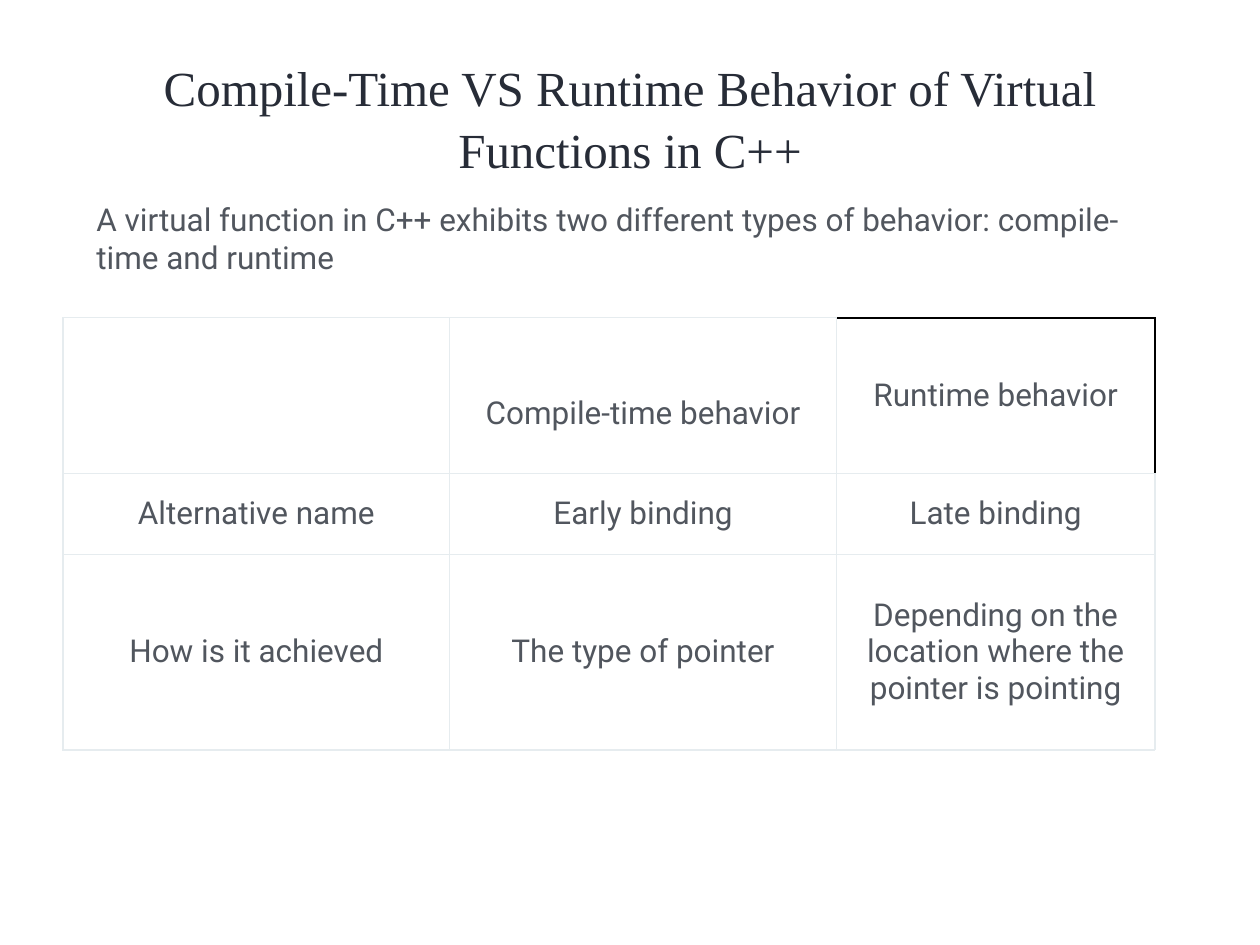
from lxml import etree
from pptx import Presentation
from pptx.dml import color
from pptx.enum import text as t
from pptx.oxml import ns
from pptx.util import Pt

COLORS = {"title": "272C37", "body": "51565E", "grid": "E6ECEF",
          "accent": "000000", "cell": "FFFFFF"}
COLUMN_WIDTHS = (221, 221, 182)
ROW_HEIGHTS = (89.2, 46.2, 111.6)
COMPARISON = (
    ("", "Compile-time behavior", "Runtime behavior"),
    ("Alternative name", "Early binding", "Late binding"),
    ("How is it achieved", "The type of pointer",
     "Depending on the location where the pointer is pointing"),
)


def rgb(name):
    """Return the named colour."""
    return color.RGBColor.from_string(COLORS[name])


def write(frame, wording, size=18, font="Roboto", ink="body",
          align=t.PP_ALIGN.CENTER, spacing=None):
    """Write one formatted paragraph into a text frame."""
    frame.word_wrap = True
    paragraph = frame.paragraphs[0]
    paragraph.alignment = align
    paragraph.line_spacing = spacing
    run = paragraph.add_run()
    run.text = wording
    run.font.size = Pt(size)
    run.font.name = font
    run.font.color.rgb = rgb(ink)


def place(shape, box):
    """Move a shape to a box given in points."""
    shape.left, shape.top, shape.width, shape.height = map(Pt, box)


def set_border(cell, side, ink, width=0.75):
    """Draw one side of a cell's border."""
    line = etree.SubElement(cell._tc.get_or_add_tcPr(), ns.qn(f"a:ln{side}"),
                            w=str(Pt(width)))
    fill = etree.SubElement(line, ns.qn("a:solidFill"))
    etree.SubElement(fill, ns.qn("a:srgbClr"), val=COLORS[ink])


def add_title(slide, box):
    """Place the heading in the title placeholder."""
    title = slide.shapes.title
    place(title, box)
    title.text_frame.vertical_anchor = t.MSO_ANCHOR.MIDDLE
    write(title.text_frame, "Compile-Time VS Runtime Behavior of Virtual "
          "Functions in C++", size=28, font="Times New Roman", ink="title",
          spacing=1.05)


def add_intro(slide, box):
    """Place the introductory sentence."""
    intro = slide.shapes.add_textbox(*map(Pt, box))
    write(intro.text_frame, "A virtual function in C++ exhibits two different "
          "types of behavior: compile-time and runtime", align=t.PP_ALIGN.LEFT)


def format_cell(cell, wording, is_runtime_header, is_compile_header):
    """Set the borders, fill, margins and wording of a cell."""
    for side in "LRTB":
        if is_runtime_header and side in "RT":
            set_border(cell, side, "accent", 1)
        else:
            set_border(cell, side, "grid")
    if is_runtime_header:
        cell.fill.background()
    else:
        cell.fill.solid()
        cell.fill.fore_color.rgb = rgb("cell")
    if wording:
        cell.vertical_anchor = t.MSO_ANCHOR.MIDDLE
        cell.margin_left = cell.margin_right = Pt(8.6)
        cell.margin_bottom = Pt(12.2)
        cell.margin_top = Pt(33.3 if is_compile_header else 12.2)
        write(cell.text_frame, wording)


def add_comparison(slide, left, top):
    """Place the table that compares both behaviours."""
    box = left, top, sum(COLUMN_WIDTHS), sum(ROW_HEIGHTS)
    table = slide.shapes.add_table(len(ROW_HEIGHTS), len(COLUMN_WIDTHS),
                                   *map(Pt, box)).table
    table.first_row = table.horz_banding = False
    for column, width in zip(table.columns, COLUMN_WIDTHS):
        column.width = Pt(width)
    for row, height in zip(table.rows, ROW_HEIGHTS):
        row.height = Pt(height)
    for r, wordings in enumerate(COMPARISON):
        for c, wording in enumerate(wordings):
            format_cell(table.cell(r, c), wording, (r, c) == (0, 2),
                        (r, c) == (0, 1))


def main():
    """Build and save the slide."""
    deck = Presentation()
    deck.slide_width, deck.slide_height = Pt(720), Pt(540)
    slide = deck.slides.add_slide(deck.slide_layouts[5])
    add_title(slide, (36, 21.6, 648, 90))
    add_intro(slide, (48, 111, 624, 51))
    add_comparison(slide, 36, 181.6)
    deck.save("out.pptx")


if __name__ == "__main__":
    main()
